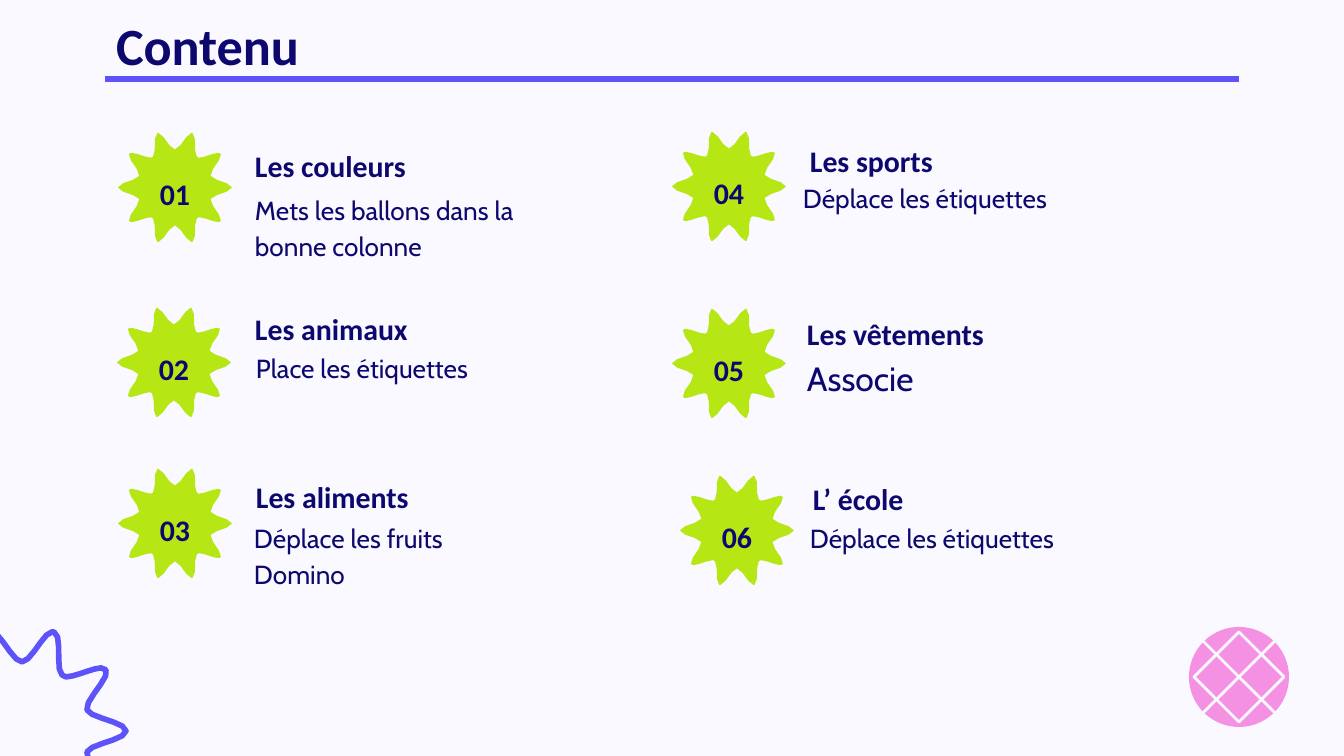
from math import dist

from pptx import Presentation
from pptx.dml.color import RGBColor
from pptx.enum.shapes import MSO_CONNECTOR, MSO_SHAPE
from pptx.enum.text import MSO_ANCHOR, PP_ALIGN
from pptx.oxml.ns import qn
from pptx.util import Pt
from lxml.etree import SubElement

NAVY, VIOLET, LIME, PINK, PALE = "0D086E", "5D53F8", "B7E615", "F591E3", "F9F9FF"
HEAD, BODY = "Calibri", "Cabin"

# Number, heading, body lines, body size, then corners of star, heading and body
TOPICS = [
    ("01", "Les couleurs", ["Mets les ballons dans la bonne colonne"], 14,
     (118, 133), (242, 137), (242, 177)),
    ("02", "Les animaux", ["Place les étiquettes"], 14,
     (117, 308), (242, 300), (243, 335)),
    ("03", "Les aliments", ["Déplace les fruits", "Domino"], 14,
     (118, 469), (243, 468), (241, 505)),
    ("04", "Les sports", ["Déplace les étiquettes"], 14,
     (672, 132), (797, 132), (790, 165)),
    ("05", "Les vêtements", ["Associe"], 18,
     (672, 309), (794, 305), (794, 339)),
    ("06", "L’ école", ["Déplace les étiquettes"], 14,
     (680, 476), (800, 470), (797, 505)),
]
STAR = (114, 109)
HEAD_BOX, BODY_BOX = (323, 60), (356, 115)

# Quarter of the star: cubic curves from the right tip to the top valley
TIP, SPAN = (104, 0), (208, 198)
CURVES = [
    ((104, 9), (68, 13), (65, 21)),
    ((62, 30), (89, 54), (84, 61)),
    ((83, 62), (81, 63), (79, 63)),
    ((71, 63), (53, 54), (44, 54)),
    ((42, 54), (41, 55), (40, 56)),
    ((33, 61), (41, 96), (32, 99)),
    ((32, 99), (31, 99), (30, 99)),
    ((22, 99), (9, 69), (0, 69)),
]


def px(n):
    return round(n * 9144000 / 1344)


def rgb(code):
    return RGBColor.from_string(code)


def paint(shape, fill=None, line=None, width=3):
    shape.shadow.inherit = False
    if fill:
        shape.fill.solid()
        shape.fill.fore_color.rgb = rgb(fill)
    else:
        shape.fill.background()
    if line:
        shape.line.color.rgb = rgb(line)
        shape.line.width = Pt(width)
    else:
        shape.line.fill.background()


def write(shape, lines, size, font, bold=False, anchor=MSO_ANCHOR.TOP,
          align=PP_ALIGN.LEFT, top=13, space=1.15):
    frame = shape.text_frame
    frame.word_wrap = True
    frame.vertical_anchor = anchor
    frame.margin_left = frame.margin_right = frame.margin_bottom = px(13)
    frame.margin_top = px(top)
    frame.text = "\n".join(lines)
    for para in frame.paragraphs:
        para.alignment = align
        para.line_spacing = space
        para.font.size, para.font.name, para.font.bold = Pt(size), font, bold
        para.font.color.rgb = rgb(NAVY)


def trace(shapes, paths):
    """Draw (points, closed) paths as one freeform."""
    pen = None
    for points, closed in paths:
        first, *rest = [(px(x), px(y)) for x, y in points]
        if pen is None:
            pen = shapes.build_freeform(*first)
        else:
            pen.move_to(*first)
        pen.add_line_segments(rest, close=closed)
    return pen.convert_to_shape()


def outline(steps):
    """Sample the quarter and mirror it into the whole star."""
    pts, a = [TIP], TIP
    for b, c, d in CURVES:
        count = steps if dist(a, d) > 8 else 1
        for i in range(1, count + 1):
            t = i / count
            u = 1 - t
            pts.append(tuple(u**3 * p + 3 * u * u * t * q + 3 * u * t * t * r + t**3 * s
                             for p, q, r, s in zip(a, b, c, d)))
        a = d
    half = pts + [(-x, y) for x, y in pts[-2::-1]]
    return half + [(x, -y) for x, y in half[-2:0:-1]]


def star(left, top, wide, high, steps):
    points = [(left + wide * (0.5 + x / SPAN[0]), top + high * (0.5 - y / SPAN[1]))
              for x, y in outline(steps)]
    return trace(slide.shapes, [(points, True)])


def label(spot, size):
    return slide.shapes.add_textbox(*map(px, spot + size))


deck = Presentation()
deck.slide_width, deck.slide_height = px(1344), px(756)
slide = deck.slides.add_slide(deck.slide_layouts[5])
slide.background.fill.solid()
slide.background.fill.fore_color.rgb = rgb(PALE)

# Title and its rule
title = slide.shapes.title
title.left, title.top, title.width, title.height = map(px, (103, 0, 1133, 82))
write(title, ["Contenu"], 28, HEAD, True, space=1)
rule = slide.shapes.add_connector(MSO_CONNECTOR.STRAIGHT, *map(px, (105, 79, 1239, 79)))
rule.line.color.rgb = rgb(VIOLET)
rule.line.width = Pt(3)
SubElement(rule._element.spPr, qn("a:effectLst"))

# Topics
for number, heading, lines, size, spot, head, body in TOPICS:
    badge = star(*spot, *STAR, steps=3)
    paint(badge, LIME)
    write(badge, [number], 16, HEAD, True, MSO_ANCHOR.MIDDLE, PP_ALIGN.CENTER, top=19)
    write(label(head, HEAD_BOX), [heading], 16, HEAD, True, MSO_ANCHOR.BOTTOM)
    write(label(body, BODY_BOX), lines, size, BODY)

# Corner star
paint(star(-82, 632, *SPAN, steps=5), line=VIOLET)

# Ball with its net
CX, CY, R, NET, ARM = 1239, 677, 50, 45, 36
ball = slide.shapes.add_group_shape().shapes
disc = ball.add_shape(MSO_SHAPE.OVAL, px(CX - R), px(CY - R), px(2 * R), px(2 * R))
paint(disc, PINK)
mesh = trace(ball, [
    ([(CX, CY - NET), (CX + NET, CY), (CX, CY + NET), (CX - NET, CY)], True),
    ([(CX - ARM, CY - ARM), (CX + ARM, CY + ARM)], False),
    ([(CX - ARM, CY + ARM), (CX + ARM, CY - ARM)], False),
])
paint(mesh, line=PALE, width=1.5)

deck.save("out.pptx")
